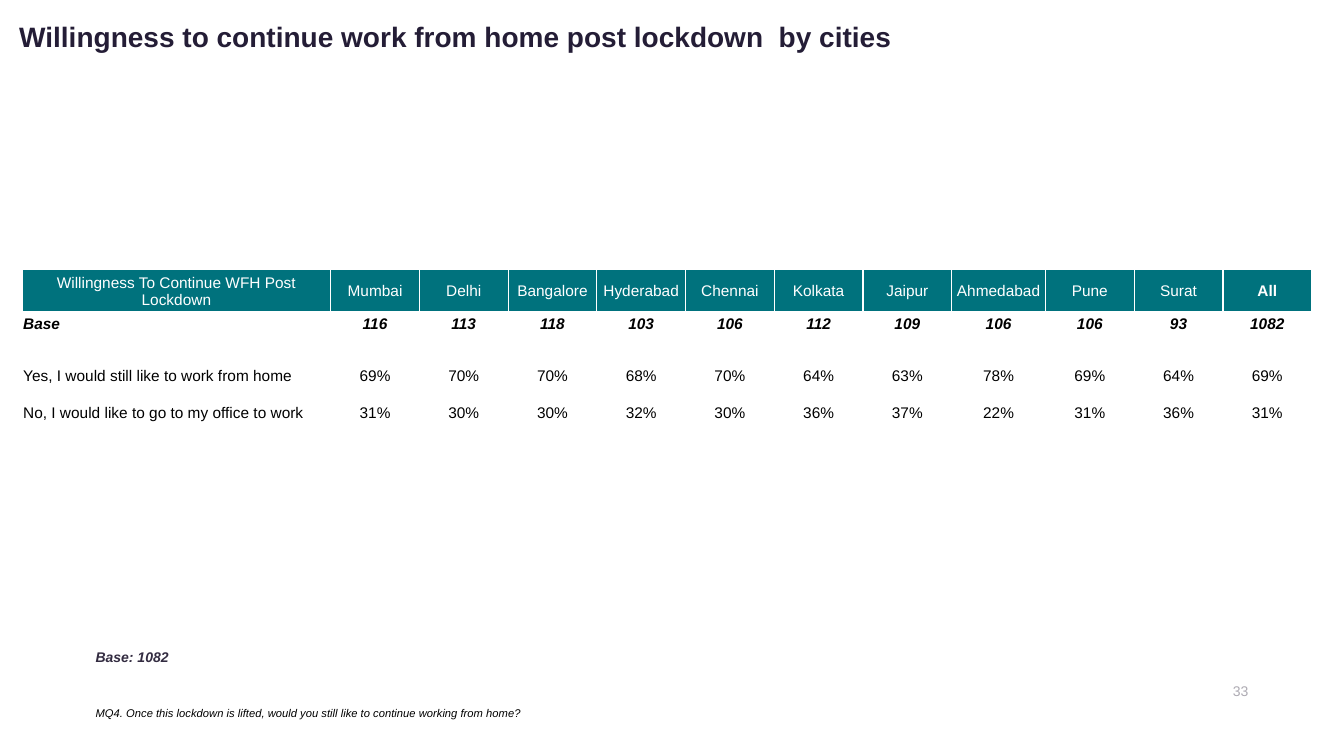
from pptx import Presentation
from pptx.dml.color import RGBColor
from pptx.enum.text import MSO_ANCHOR, MSO_AUTO_SIZE, PP_ALIGN
from pptx.oxml.ns import qn
from pptx.util import Inches, Pt
from lxml import etree

LEFT, MID, RIGHT = PP_ALIGN.LEFT, PP_ALIGN.CENTER, PP_ALIGN.RIGHT
CENTRE = MSO_ANCHOR.MIDDLE
GROW = MSO_AUTO_SIZE.SHAPE_TO_FIT_TEXT
FACE = "Arial"
HUES = {"title": "241D36", "note": "332C41", "text": "000000",
        "head": "00727D", "white": "FFFFFF"}

TITLE = "Willingness to continue work from home post lockdown  by cities"
BASE = "Base: 1082"
ASK = ("MQ4. Once this lockdown is lifted, would you still like "
       "to continue working from home?")
PAGE = "33"
GRID = [
    ["Willingness To Continue WFH Post Lockdown", "Mumbai", "Delhi",
     "Bangalore", "Hyderabad", "Chennai", "Kolkata", "Jaipur",
     "Ahmedabad", "Pune", "Surat", "All"],
    ["Base", "116", "113", "118", "103", "106", "112", "109", "106",
     "106", "93", "1082"],
    [""] * 12,
    ["Yes, I would still like to work from home", "69%", "70%", "70%",
     "68%", "70%", "64%", "63%", "78%", "69%", "64%", "69%"],
    ["No, I would like to go to my office to work", "31%", "30%", "30%",
     "32%", "30%", "36%", "37%", "22%", "31%", "36%", "31%"],
]
WIDE = [3.06] + [0.88] * 7 + [0.93] + [0.88] * 3
HIGH = [0.43, 0.22, 0.22, 0.37, 0.37]


def style(para, size, hue, bold=False, slant=False, align=LEFT):
    para.alignment = align
    font = para.font
    font.name, font.size = FACE, Pt(size)
    font.bold, font.italic = bold, slant
    font.color.rgb = RGBColor.from_string(HUES[hue])


def note(slide, text, spot, *look, **more):
    box = slide.shapes.add_textbox(*map(Inches, spot))
    frame = box.text_frame
    frame.word_wrap = True
    frame.auto_size = GROW
    para = frame.paragraphs[0]
    para.text = text
    style(para, *look, **more)
    return para


def edge(cell, head):
    props = cell._tc.get_or_add_tcPr()
    for n, side in enumerate(("lnL", "lnR", "lnT", "lnB")):
        width = 3 if head and side == "lnB" else 1
        line = etree.Element(qn("a:" + side), w=str(Pt(width)))
        fill = etree.SubElement(line, qn("a:solidFill"))
        etree.SubElement(fill, qn("a:srgbClr"), val=HUES["white"])
        props.insert(n, line)


def fill_cell(cell, text, row, col):
    head = row == 0
    cell.fill.solid()
    cell.fill.fore_color.rgb = RGBColor.from_string(
        HUES["head" if head else "white"])
    cell.vertical_anchor = CENTRE
    if not (head and text == "All"):
        cell.margin_left = cell.margin_right = cell.margin_top = Inches(0.01)
        cell.margin_bottom = 0
    para = cell.text_frame.paragraphs[0]
    para.text = text
    style(para, 11, "white" if head else "text",
          bold=row == 1 or text == "All", slant=row == 1,
          align=LEFT if col == 0 and not head else MID)
    if not text:
        etree.SubElement(para._p, qn("a:endParaRPr"), sz="1100")
    edge(cell, head)


def main():
    deck = Presentation()
    deck.slide_width, deck.slide_height = Inches(13.33), Inches(7.5)
    slide = deck.slides.add_slide(deck.slide_layouts[5])

    title = slide.shapes.title
    title.left, title.top = Inches(0.09), Inches(0.14)
    title.width, title.height = Inches(13.01), Inches(0.44)
    title.text = TITLE
    title.text_frame.auto_size = GROW
    style(title.text_frame.paragraphs[0], 20, "title", bold=True)

    page = note(slide, PAGE, (11.42, 6.72, 1.06, 0.27), 10, "note",
                align=RIGHT)
    tint = next(page._p.iter(qn("a:srgbClr")))
    etree.SubElement(tint, qn("a:alpha"), val="40000")
    note(slide, ASK, (0.85, 6.96, 9.93, 0.24), 8, "text", slant=True)
    note(slide, BASE, (0.85, 6.38, 1.78, 0.27), 10, "note",
         bold=True, slant=True)

    spot = (0.22, 2.67, sum(WIDE), sum(HIGH))
    table = slide.shapes.add_table(
        len(HIGH), len(WIDE), *map(Inches, spot)).table
    table.horz_banding = False
    for col, width in zip(table.columns, WIDE):
        col.width = Inches(width)
    for row, height in zip(table.rows, HIGH):
        row.height = Inches(height)
    for r, line in enumerate(GRID):
        for c, text in enumerate(line):
            fill_cell(table.cell(r, c), text, r, c)

    deck.save("out.pptx")


if __name__ == "__main__":
    main()
